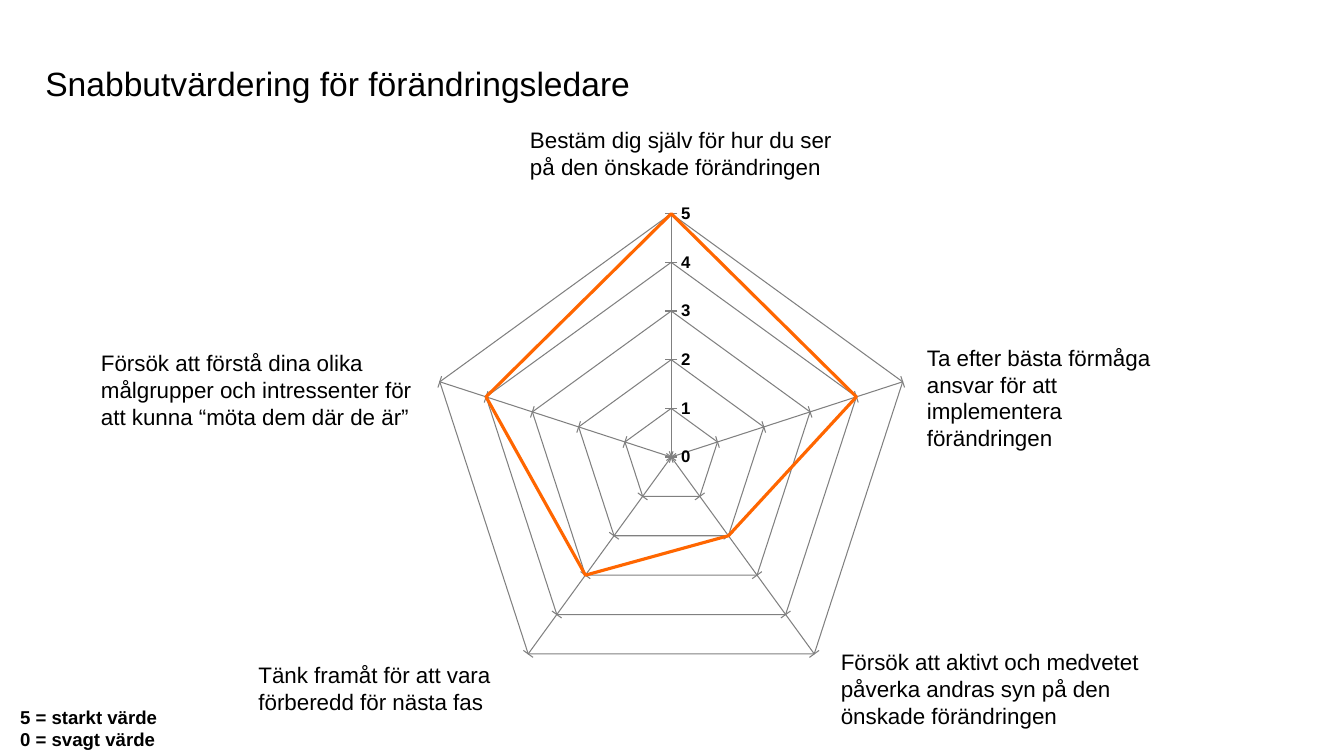
from lxml import etree
from pptx import Presentation
from pptx import util as u
from pptx.chart import data as cd
from pptx.dml.color import RGBColor
from pptx.enum import chart as ch, text as tx
from pptx.oxml import ns

Pt = u.Pt
BLACK = RGBColor(0, 0, 0)
GREY = RGBColor(0x80, 0x80, 0x80)
ORANGE = RGBColor(0xFF, 0x66, 0x00)

deck = Presentation()
deck.slide_width, deck.slide_height = Pt(960), Pt(540)
slide = deck.slides.add_slide(deck.slide_layouts[5])


def write(words, box, size=16, bold=False, shape=None):
    left, top, width, height = [Pt(n) for n in box]
    if shape is None:
        shape = slide.shapes.add_textbox(left, top, width, height)
    shape.left, shape.top, shape.width, shape.height = left, top, width, height
    frame = shape.text_frame
    frame.text = words
    frame.word_wrap = True
    frame.auto_size = tx.MSO_AUTO_SIZE.NONE
    frame.vertical_anchor = tx.MSO_ANCHOR.TOP
    for para in frame.paragraphs:
        para.alignment = tx.PP_ALIGN.LEFT
        font = para.font
        font.name, font.size, font.bold = "Arial", Pt(size), bold
        font.color.rgb = BLACK


write("Snabbutvärdering för förändringsledare", (25.2, 41, 677.5, 48),
      size=24, shape=slide.shapes.title)

data = cd.CategoryChartData()
data.categories = ["1", "2", "3", "4", "5"]
data.add_series("Series 1", [5, 4, 2, 3, 4])
chart = slide.shapes.add_chart(
    ch.XL_CHART_TYPE.RADAR, Pt(82.1), Pt(110.2), Pt(776.2), Pt(421.2), data).chart
chart.has_legend = chart.has_title = False
chart.font.name, chart.font.size = "Arial", Pt(10)
chart.font.color.rgb = BLACK

plot = chart.plots[0]
plot.vary_by_categories = False
line = plot.series[0].format.line
line.color.rgb, line.width = ORANGE, Pt(2.25)

spokes, scale = chart.category_axis, chart.value_axis
spokes.visible = False
spokes.tick_label_position = ch.XL_TICK_LABEL_POSITION.NONE
scale.minimum_scale, scale.maximum_scale, scale.major_unit = 0, 5, 1
scale.major_tick_mark = ch.XL_TICK_MARK.CROSS
label = scale.tick_labels.font
label.name, label.size, label.bold = "Arial", Pt(12), True
label.color.rgb = BLACK
for axis in (spokes, scale):
    axis.has_major_gridlines = True
    for rule in (axis.format.line, axis.major_gridlines.format.line):
        rule.color.rgb, rule.width = GREY, Pt(0.75)

area = chart.element.find(".//" + ns.qn("c:plotArea"))
for old in area.findall(ns.qn("c:layout")):
    area.remove(old)
layout = etree.Element(ns.qn("c:layout"))
area.insert(0, layout)
manual = etree.SubElement(layout, ns.qn("c:manualLayout"))
for tag, val in (("layoutTarget", "inner"), ("xMode", "edge"), ("yMode", "edge"),
                 ("x", "0.288"), ("y", "0.044"), ("w", "0.448"), ("h", "0.939")):
    etree.SubElement(manual, ns.qn("c:" + tag)).set("val", val)

for words, box in (
    ("Bestäm dig själv för hur du ser på den önskade förändringen",
     (371.5, 86.4, 240.5, 46)),
    ("Ta efter bästa förmåga ansvar för att implementera förändringen",
     (655, 242, 185, 85)),
    ("Försök att aktivt och medvetet påverka andras syn på den önskade förändringen",
     (593.5, 459.5, 264.5, 65.5)),
    ("Tänk framåt för att vara förberedd för nästa fas",
     (177.5, 468.7, 186.5, 46)),
    ("Försök att förstå dina olika målgrupper och intressenter för att kunna “möta dem där de är”",
     (65, 246, 237, 85)),
):
    write(words, box)
write("5 = starkt värde\n0 = svagt värde", (7.2, 500.4, 262.8, 39.6), size=13.3, bold=True)

deck.save("out.pptx")
